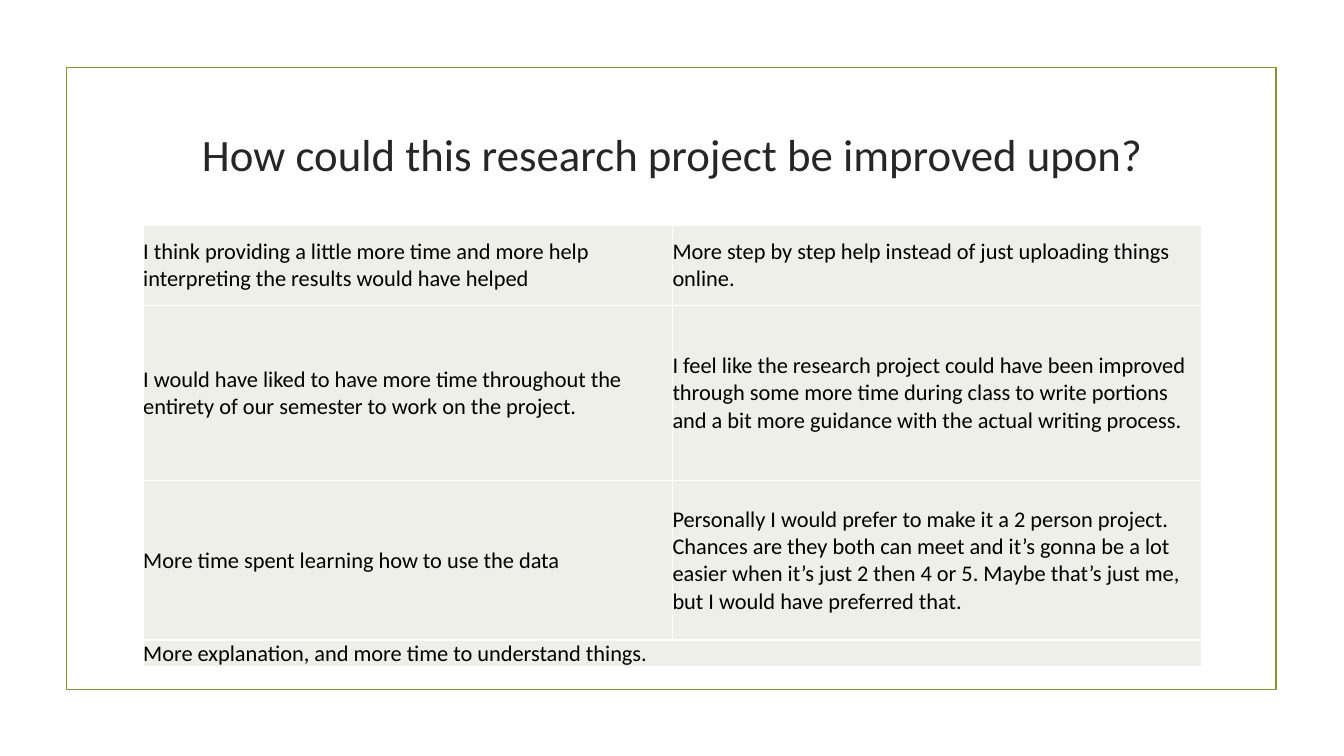
"""Build the slide on how the research project could be improved."""
from dataclasses import dataclass

from lxml import etree
from pptx import Presentation
from pptx.dml.color import RGBColor
from pptx.enum.shapes import MSO_SHAPE
from pptx.enum.text import MSO_ANCHOR, PP_ALIGN
from pptx.oxml.ns import qn
from pptx.slide import Slide
from pptx.table import _Cell
from pptx.text.text import TextFrame
from pptx.util import Inches, Pt

RECT = MSO_SHAPE.RECTANGLE
MIDDLE = MSO_ANCHOR.MIDDLE
LEFT = PP_ALIGN.LEFT
CENTER = PP_ALIGN.CENTER

FONT = "Calibri"
COLORS = {
    "frame": "83992A",
    "title": "262626",
    "text": "000000",
    "cell": "EDEFE8",
    "border": "FFFFFF",
}
TABLE_LEFT, TABLE_TOP, TABLE_WIDTH = 1.42, 2.24, 10.5


@dataclass(frozen=True)
class AnswerRow:
    height: float
    answers: tuple[str, ...]


ROWS = [
    AnswerRow(0.79, (
        "I think providing a little more time and more help interpreting "
        "the results would have helped",
        "More step by step help instead of just uploading things online.",
    )),
    AnswerRow(1.74, (
        "I would have liked to have more time throughout the entirety of "
        "our semester to work on the project.",
        "I feel like the research project could have been improved through "
        "some more time during class to write portions and a bit more "
        "guidance with the actual writing process.",
    )),
    AnswerRow(1.58, (
        "More time spent learning how to use the data",
        "Personally I would prefer to make it a 2 person project. Chances "
        "are they both can meet and it’s gonna be a lot easier when it’s "
        "just 2 then 4 or 5. Maybe that’s just me, but I would have "
        "preferred that.",
    )),
    AnswerRow(0.24, ("More explanation, and more time to understand things.",)),
]


def rgb(name: str) -> RGBColor:
    return RGBColor.from_string(COLORS[name])


def write(tf: TextFrame, text: str, size: float, color: str, align: PP_ALIGN) -> None:
    tf.word_wrap = True
    p = tf.paragraphs[0]
    p.alignment = align
    r = p.add_run()
    r.text = text
    r.font.name = FONT
    r.font.size = Pt(size)
    r.font.color.rgb = rgb(color)


def style_cell(cell: _Cell) -> None:
    cell.margin_left = cell.margin_right = 0
    cell.margin_top = cell.margin_bottom = 0
    cell.vertical_anchor = MIDDLE
    tc_pr = cell._tc.get_or_add_tcPr()
    for side in ("lnL", "lnR", "lnT", "lnB"):
        ln = etree.SubElement(tc_pr, qn(f"a:{side}"), w=str(Pt(1)))
        fill = etree.SubElement(ln, qn("a:solidFill"))
        etree.SubElement(fill, qn("a:srgbClr"), val=COLORS["border"])
    cell.fill.solid()
    cell.fill.fore_color.rgb = rgb("cell")


def add_frame(s: Slide) -> None:
    sp = s.shapes.add_shape(RECT, Inches(0.66), Inches(0.67), Inches(12), Inches(6.17))
    sp.shadow.inherit = False
    sp.fill.background()
    sp.line.color.rgb = rgb("frame")
    sp.line.width = Pt(1.25)


def add_title(s: Slide) -> None:
    sp = s.shapes.add_textbox(
        Inches(TABLE_LEFT), Inches(0.81), Inches(TABLE_WIDTH), Inches(1.43))
    tf = sp.text_frame
    tf.vertical_anchor = MIDDLE
    write(tf, "How could this research project be improved upon?", 32, "title", CENTER)


def add_answers(s: Slide) -> None:
    height = sum(row.height for row in ROWS)
    table = s.shapes.add_table(
        len(ROWS), 2, Inches(TABLE_LEFT), Inches(TABLE_TOP),
        Inches(TABLE_WIDTH), Inches(height)).table
    table.first_row = False
    table.horz_banding = False
    for i, row in enumerate(ROWS):
        table.rows[i].height = Inches(row.height)
        for j in range(2):
            style_cell(table.cell(i, j))
        if len(row.answers) == 1:
            table.cell(i, 0).merge(table.cell(i, 1))
        for j, answer in enumerate(row.answers):
            write(table.cell(i, j).text_frame, answer, 16, "text", LEFT)


def main() -> None:
    prs = Presentation()
    prs.slide_width = Inches(13.33)
    prs.slide_height = Inches(7.5)
    s = prs.slides.add_slide(prs.slide_layouts[6])
    add_frame(s)
    add_title(s)
    add_answers(s)
    prs.save("out.pptx")


if __name__ == "__main__":
    main()
